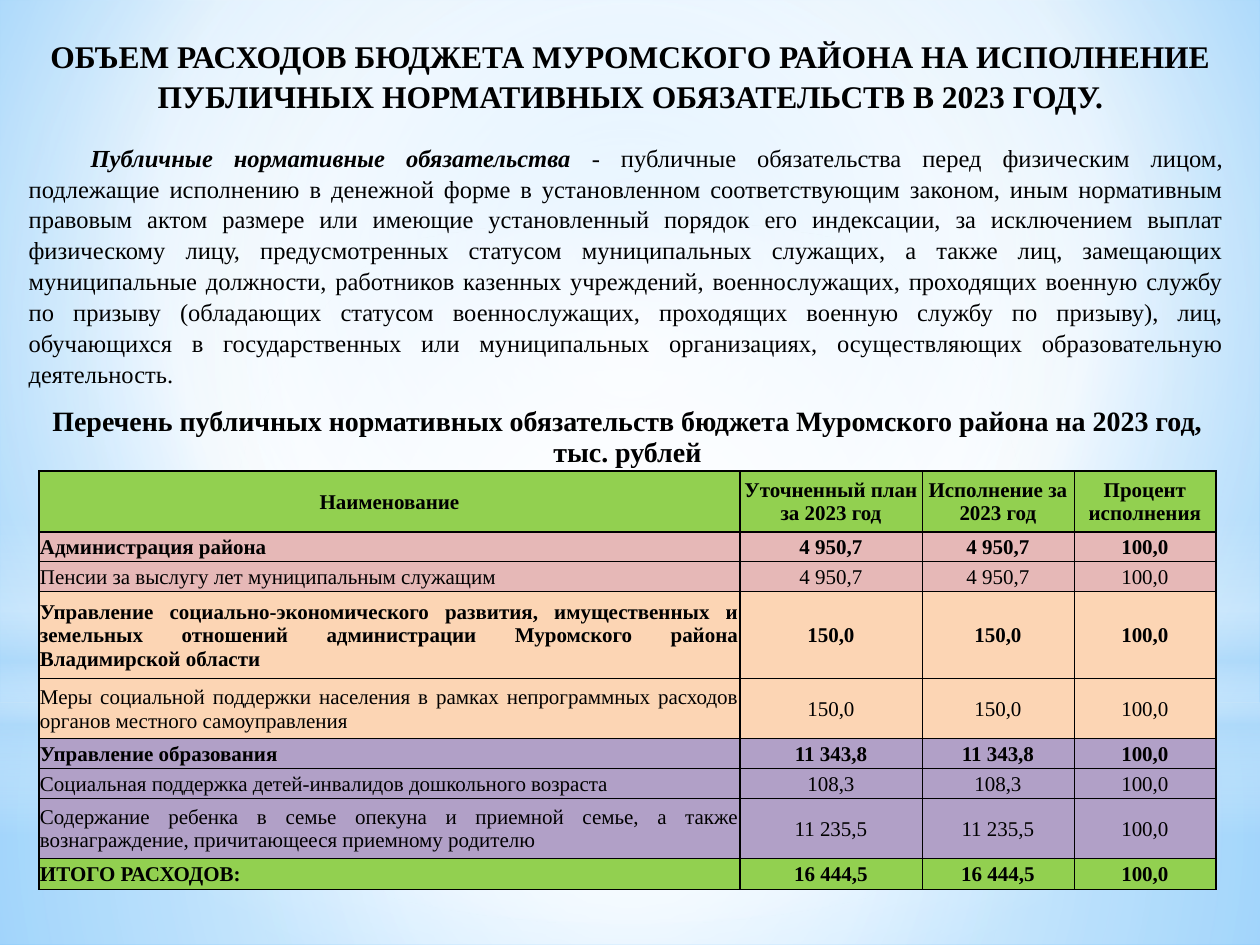
from lxml.etree import SubElement
from pptx import Presentation
from pptx.dml.color import RGBColor
from pptx.enum.shapes import MSO_SHAPE
from pptx.enum.text import MSO_ANCHOR, MSO_AUTO_SIZE, PP_ALIGN
from pptx.oxml import parse_xml
from pptx.oxml.ns import nsdecls, qn
from pptx.util import Pt

PX = 914400 / 126
FONT = "Times New Roman"
HUES = {
    "ink": "000000", "white": "FFFFFF", "haze": "B4DCFA",
    "sky": "9ED5FF", "deep": "5BB9FF", "green": "92D050",
    "pink": "E6B8B7", "peach": "FCD5B4", "plum": "B1A0C7",
}


def write(para, text, size=12, bold=False, italic=False, align=PP_ALIGN.CENTER):
    para.alignment = align
    run = para.add_run()
    run.text = text
    font = run.font
    font.name, font.size, font.bold, font.italic = FONT, Pt(size), bold, italic
    font.color.rgb = RGBColor.from_string(HUES["ink"])


def blend(stops, focus=None):
    marks = "".join(
        f'<a:gs pos="{pos * 1000}"><a:srgbClr val="{HUES[hue]}">'
        f'<a:alpha val="{alpha * 1000}"/></a:srgbClr></a:gs>'
        for pos, hue, alpha in stops)
    if focus:
        left, top, right, bottom = (side * 1000 for side in focus)
        way = (f'<a:path path="circle"><a:fillToRect l="{left}" t="{top}" '
               f'r="{right}" b="{bottom}"/></a:path>')
    else:
        way = '<a:lin ang="5400000" scaled="0"/>'
    return parse_xml(f'<a:gradFill {nsdecls("a")} rotWithShape="1">'
                     f'<a:gsLst>{marks}</a:gsLst>{way}</a:gradFill>')


deck = Presentation()
deck.slide_width, deck.slide_height = round(1260 * PX), round(945 * PX)
slide = deck.slides.add_slide(deck.slide_layouts[1])

back = slide.background.fill
back.solid()
base = slide.element.cSld.bg.bgPr
base.replace(base[0], blend(
    [(0, "sky", 100), (60, "white", 100), (100, "deep", 100)], (20, 10, 20, 60)))

mid = (50, 50, 50, 50)
glows = [
    (MSO_SHAPE.RECTANGLE, 703, 242, mid,
     [(0, "white", 91), (37, "white", 76), (100, "haze", 79)]),
    (MSO_SHAPE.RECTANGLE, 0, 703, mid,
     [(0, "white", 89), (48, "white", 62), (100, "haze", 79)]),
    (MSO_SHAPE.RECTANGLE, 519, 315, None,
     [(0, "white", 0), (29, "white", 30), (45, "haze", 40),
      (55, "white", 26), (65, "haze", 60), (100, "white", 0)]),
    (MSO_SHAPE.OVAL, 220, 703, mid, [(0, "white", 100), (56, "white", 0)]),
]
tree = slide.shapes.element
for spot, (kind, top, high, focus, stops) in enumerate(glows, 2):
    glow = slide.shapes.add_shape(kind, 0, round(top * PX), round(1260 * PX), round(high * PX))
    glow.shadow.inherit = False
    glow.line.fill.background()
    glow.fill.solid()
    props = glow.element.spPr
    props.replace(props.find(qn("a:solidFill")), blend(stops, focus))
    tree.insert(spot, glow.element)

title, body = slide.placeholders
for holder, box in ((title, (35, 29, 1191, 89)), (body, (16, 135, 1220, 251))):
    holder.left, holder.top, holder.width, holder.height = (round(n * PX) for n in box)
    frame = holder.text_frame
    frame.word_wrap = True
    frame.auto_size = MSO_AUTO_SIZE.NONE
    frame.vertical_anchor = MSO_ANCHOR.TOP
    frame.paragraphs[0].space_before = Pt(0)
    frame.paragraphs[0].line_spacing = 1.05

write(title.text_frame.paragraphs[0],
      "ОБЪЕМ РАСХОДОВ БЮДЖЕТА МУРОМСКОГО РАЙОНА НА ИСПОЛНЕНИЕ "
      "ПУБЛИЧНЫХ НОРМАТИВНЫХ ОБЯЗАТЕЛЬСТВ В 2023 ГОДУ.", size=18, bold=True)

para = body.text_frame.paragraphs[0]
write(para, "Публичные нормативные обязательства", size=14, bold=True,
      italic=True, align=PP_ALIGN.JUSTIFY)
write(para,
      " - публичные обязательства перед физическим лицом, подлежащие исполнению "
      "в денежной форме в установленном соответствующим законом, иным нормативным "
      "правовым актом размере или имеющие установленный порядок его индексации, "
      "за исключением выплат физическому лицу, предусмотренных статусом "
      "муниципальных служащих, а также лиц, замещающих муниципальные должности, "
      "работников казенных учреждений, военнослужащих, проходящих военную службу "
      "по призыву (обладающих статусом военнослужащих, проходящих военную службу "
      "по призыву), лиц, обучающихся в государственных или муниципальных "
      "организациях, осуществляющих образовательную деятельность.",
      size=14, align=PP_ALIGN.JUSTIFY)
form = para._p.get_or_add_pPr()
form.set("marL", "0")
form.set("indent", str(round(62 * PX)))
SubElement(form, qn("a:buNone"))

rows = [
    (68, None, True, ["Перечень публичных нормативных обязательств бюджета "
                      "Муромского района на 2023 год, тыс. рублей", "", "", ""]),
    (61, "green", True, ["Наименование", "Уточненный план за 2023 год",
                         "Исполнение за 2023 год", "Процент исполнения"]),
    (30, "pink", True, ["Администрация района", "4 950,7", "4 950,7", "100,0"]),
    (30, "pink", False, ["Пенсии за выслугу лет муниципальным служащим",
                         "4 950,7", "4 950,7", "100,0"]),
    (87, "peach", True, ["Управление социально-экономического развития, имущественных "
                         "и земельных отношений администрации Муромского района "
                         "Владимирской области", "150,0", "150,0", "100,0"]),
    (60, "peach", False, ["Меры социальной поддержки населения в рамках непрограммных "
                          "расходов органов местного самоуправления",
                          "150,0", "150,0", "100,0"]),
    (30, "plum", True, ["Управление образования", "11 343,8", "11 343,8", "100,0"]),
    (30, "plum", False, ["Социальная поддержка детей-инвалидов дошкольного возраста",
                         "108,3", "108,3", "100,0"]),
    (60, "plum", False, ["Содержание ребенка в семье опекуна и приемной семье, а также "
                         "вознаграждение, причитающееся приемному родителю",
                         "11 235,5", "11 235,5", "100,0"]),
    (31, "green", True, ["ИТОГО РАСХОДОВ:", "16 444,5", "16 444,5", "100,0"]),
]
wides = [701, 182, 152, 142]
tall = sum(row[0] for row in rows)
table = slide.shapes.add_table(
    len(rows), len(wides), *(round(n * PX) for n in (39, 403, sum(wides), tall))).table
table.first_row = table.horz_banding = False
for col, wide in zip(table.columns, wides):
    col.width = round(wide * PX)

for r, (high, hue, bold, texts) in enumerate(rows):
    table.rows[r].height = round(high * PX)
    for c, text in enumerate(texts):
        cell = table.cell(r, c)
        cell.vertical_anchor = MSO_ANCHOR.MIDDLE
        cell.margin_left = cell.margin_right = cell.margin_top = round(PX)
        cell.margin_bottom = 0
        thick = {"L": c < 2, "R": c in (0, 3), "T": r in (1, 2, 9), "B": r in (0, 1, 8, 9)}
        for side, heavy in thick.items():
            edge = SubElement(cell._tc.get_or_add_tcPr(), qn(f"a:ln{side}"),
                              w=str(Pt(1 if heavy else 0.5)))
            if r == 0 and side != "B":
                SubElement(edge, qn("a:noFill"))
            else:
                paint = SubElement(edge, qn("a:solidFill"))
                SubElement(paint, qn("a:srgbClr"), val=HUES["ink"])
        if hue:
            cell.fill.solid()
            cell.fill.fore_color.rgb = RGBColor.from_string(HUES[hue])
        else:
            cell.fill.background()
        if text:
            write(cell.text_frame.paragraphs[0], text, size=12 if r else 16, bold=bold,
                  align=PP_ALIGN.JUSTIFY if r > 1 and c == 0 else PP_ALIGN.CENTER)
table.cell(0, 0).merge(table.cell(0, 3))

deck.save("out.pptx")
